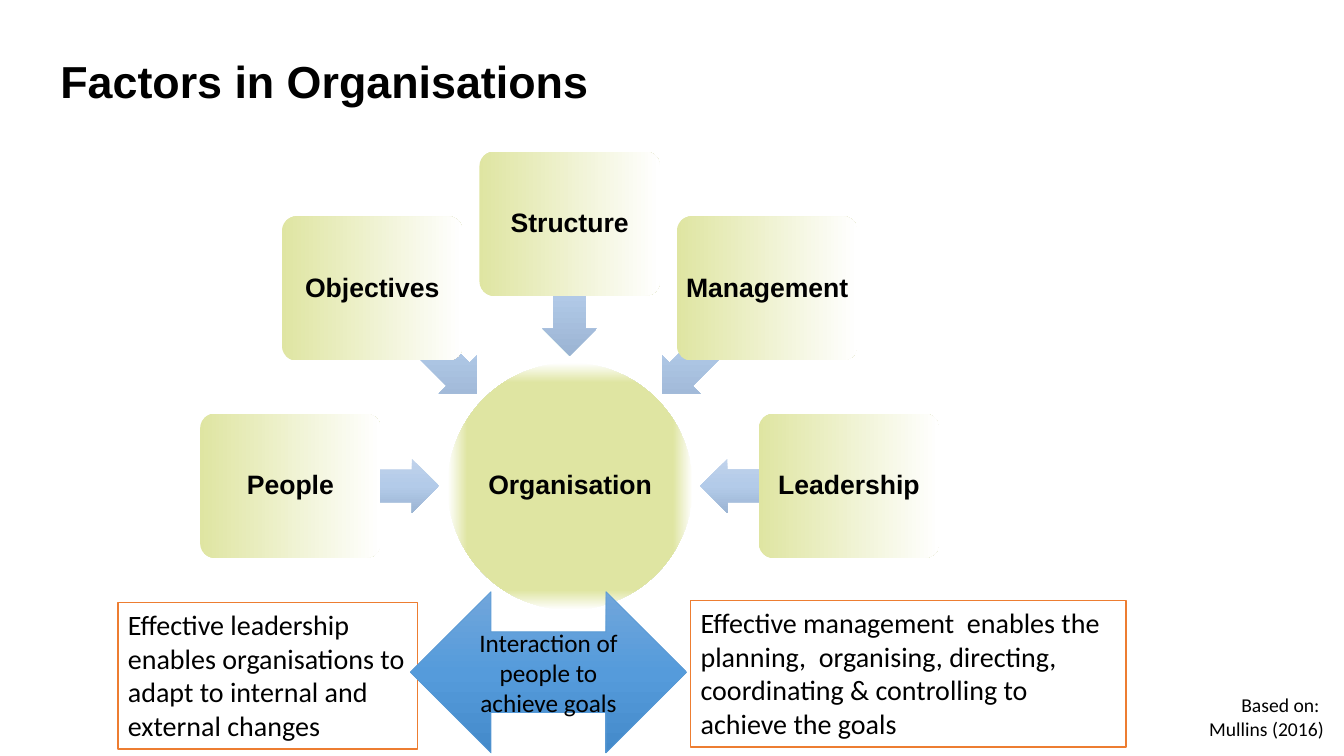
from math import cos, radians, sin
from lxml.etree import SubElement
from pptx import Presentation
from pptx.dml.color import RGBColor
from pptx.enum.shapes import MSO_SHAPE
from pptx.enum.text import MSO_ANCHOR, PP_ALIGN
from pptx.oxml.ns import qn
from pptx.util import Inches, Pt

BLACK = RGBColor(0x00, 0x00, 0x00)
WHITE = RGBColor(0xFF, 0xFF, 0xFF)
LIME = RGBColor(0xDF, 0xE5, 0xA2)
ORANGE = RGBColor(0xED, 0x7D, 0x31)
BLUE = RGBColor(0x5B, 0x9B, 0xD5)
PALE = [(0, RGBColor(0xC0, 0xD2, 0xEB)), (50, RGBColor(0xB3, 0xCB, 0xE9)),
        (100, RGBColor(0x9B, 0xB4, 0xD3))]
DEEP = [(0, RGBColor(0x71, 0xA6, 0xDB)), (50, RGBColor(0x55, 0x9B, 0xDB)),
        (100, RGBColor(0x44, 0x8A, 0xCA))]

deck = Presentation()
deck.slide_width = Inches(13.33)
deck.slide_height = Inches(7.5)
slide = deck.slides.add_slide(deck.slide_layouts[6])


def draw(kind, x, y, w, h, stops=None, angle=None):
    """Add a preset shape; stops give a gradient, without angle it follows the outline."""
    shape = slide.shapes.add_shape(kind, Inches(x), Inches(y), Inches(w), Inches(h))
    shape.shadow.inherit = False
    shape.line.fill.background()
    shape.fill.solid()
    shape.fill.fore_color.rgb = WHITE
    if stops:
        shape.fill.gradient()
        grad = shape._element.spPr.find(qn("a:gradFill"))
        for part in list(grad):
            grad.remove(part)
        grad.set("rotWithShape", "0")
        row = SubElement(grad, qn("a:gsLst"))
        for pos, tint in stops:
            stop = SubElement(row, qn("a:gs"), pos=str(pos * 1000))
            SubElement(stop, qn("a:srgbClr"), val=str(tint))
        if angle is None:
            way = SubElement(grad, qn("a:path"), path="shape")
            SubElement(way, qn("a:fillToRect"), l="50000", t="50000", r="50000", b="50000")
        else:
            SubElement(grad, qn("a:lin"), ang=str(angle * 60000), scaled="0")
    return shape


def write(shape, lines, size, font="Calibri", bold=False, align=PP_ALIGN.LEFT,
          anchor=MSO_ANCHOR.TOP, inset=None):
    frame = shape.text_frame
    frame.word_wrap = True
    frame.vertical_anchor = anchor
    if inset is not None:
        frame.margin_left = frame.margin_right = Inches(inset)
        frame.margin_top = frame.margin_bottom = Inches(inset)
    for i, line in enumerate(lines):
        para = frame.add_paragraph() if i else frame.paragraphs[0]
        para.alignment = align
        if bold:
            para.line_spacing = 0.9
        run = para.add_run()
        run.text = line
        run.font.size = Pt(size)
        run.font.name = font
        run.font.bold = bold
        run.font.color.rgb = BLACK


# Central circle
MID_X, MID_Y = 5.65, 4.82
hub = draw(MSO_SHAPE.OVAL, 4.44, 3.6, 2.43, 2.45, [(84, LIME), (100, WHITE)])
write(hub, ["Organisation"], 19, "Arial", True, PP_ALIGN.CENTER, MSO_ANCHOR.MIDDLE, 0.01)

# Factors fanned around the circle: name, box distance, arrow distance, arrow length
BOX_W, BOX_H, ARROW_H = 1.79, 1.43, 0.54
factors = [
    ("People", 2.77, 2.03, 1.47),
    ("Objectives", 2.77, 2.03, 1.47),
    ("Structure", 2.6, 1.94, 1.3),
    ("Management", 2.77, 2.03, 1.47),
    ("Leadership", 2.77, 2.03, 1.47),
]
for i, (name, far, near, size) in enumerate(factors):
    turn = 180 + 45 * i
    dx, dy = cos(radians(turn)), sin(radians(turn))
    arrow = draw(MSO_SHAPE.LEFT_ARROW, MID_X + near * dx - size / 2,
                 MID_Y + near * dy - ARROW_H / 2, size, ARROW_H, PALE, 90)
    arrow.adjustments[0] = 0.6
    arrow.rotation = turn % 360
    box = draw(MSO_SHAPE.ROUNDED_RECTANGLE, MID_X + far * dx - BOX_W / 2,
               MID_Y + far * dy - BOX_H / 2, BOX_W, BOX_H, [(0, LIME), (100, WHITE)], 0)
    box.adjustments[0] = 0.1
    write(box, [name], 19, "Arial", True, PP_ALIGN.CENTER, MSO_ANCHOR.MIDDLE, 0.04)

# Title and source
title = slide.shapes.add_textbox(Inches(0.5), Inches(0.3), Inches(8.95), Inches(1.06))
write(title, ["Factors in Organisations"], 32, "Arial", True, anchor=MSO_ANCHOR.MIDDLE)
credit = slide.shapes.add_textbox(Inches(9.01), Inches(6.83), Inches(4.22), Inches(0.57))
write(credit, ["Based on: ", "Mullins (2016)"], 14, align=PP_ALIGN.RIGHT)

# Framed notes
notes = [
    (6.85, 5.96, 4.32, "Effective management  enables the planning,  organising, directing, "
                       "coordinating & controlling to achieve the goals"),
    (1.17, 5.98, 2.97, "Effective leadership enables organisations to adapt to internal "
                       "and external changes"),
]
for x, y, w, words in notes:
    note = draw(MSO_SHAPE.RECTANGLE, x, y, w, 1.45)
    note.line.color.rgb = ORANGE
    note.line.width = Pt(1)
    write(note, [words], 20)

# Double arrow between the notes
link = draw(MSO_SHAPE.LEFT_RIGHT_ARROW, 4.07, 5.87, 2.74, 1.6, DEEP, 90)
link.line.color.rgb = BLUE
link.line.width = Pt(0.5)
write(link, ["Interaction of people to achieve goals"], 18,
      align=PP_ALIGN.CENTER, anchor=MSO_ANCHOR.MIDDLE)

deck.save("out.pptx")
